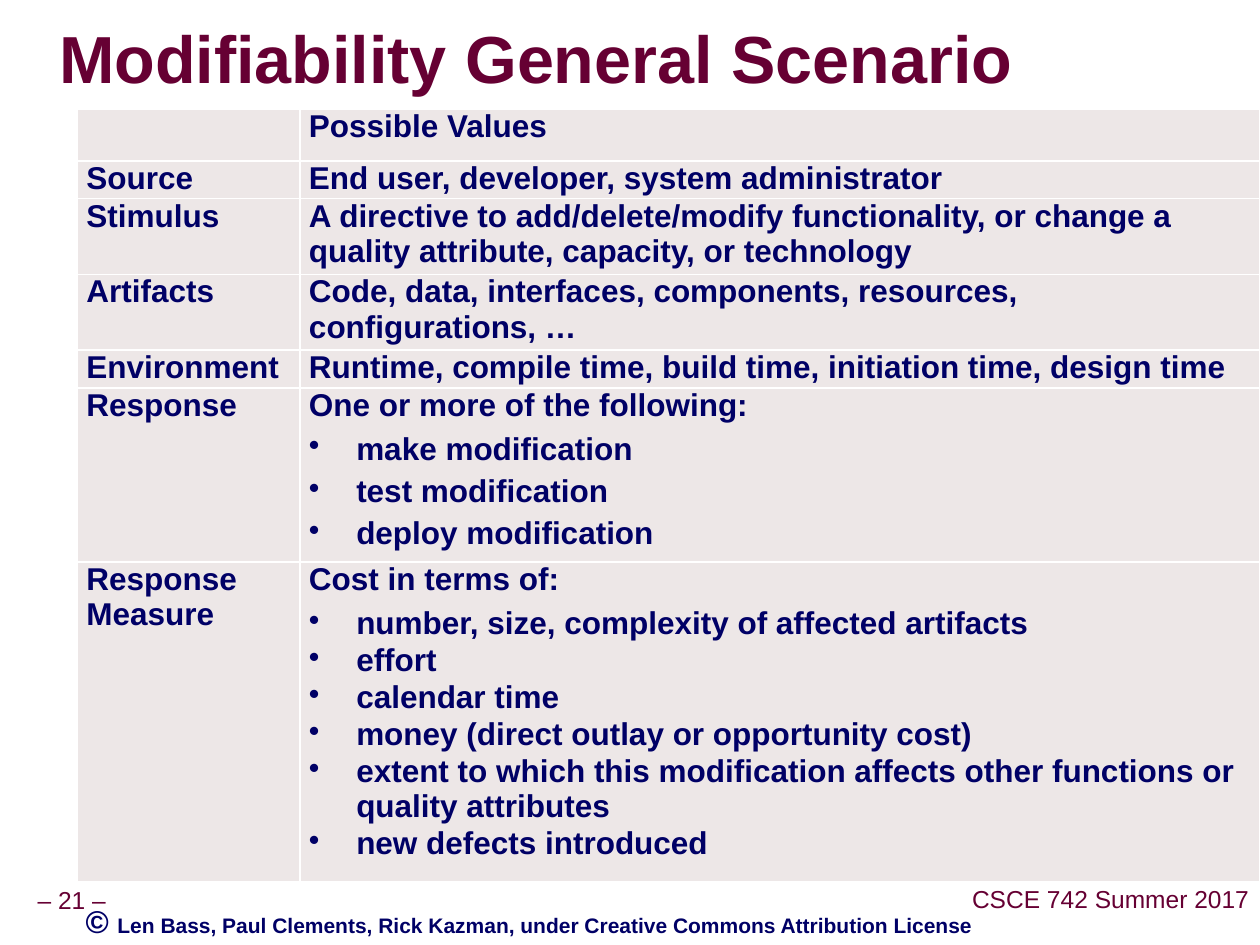
from lxml import etree
from pptx import Presentation
from pptx.dml.color import RGBColor
from pptx.enum.text import MSO_ANCHOR, MSO_AUTO_SIZE, PP_ALIGN
from pptx.oxml import parse_xml
from pptx.oxml.ns import qn
from pptx.util import Pt

LEFT, CENTER = PP_ALIGN.LEFT, PP_ALIGN.CENTER
MIDDLE, NO_FIT = MSO_ANCHOR.MIDDLE, MSO_AUTO_SIZE.NONE
NS = 'xmlns:a="http://schemas.openxmlformats.org/drawingml/2006/main"'
COLORS = {"wine": "660033", "navy": "000066", "cell": "EDE7E7",
          "line": "FFFFFF", "shade": "969696"}


def style(font, size, color, bold=False):
    font.name, font.size, font.bold = "Arial", Pt(size), bold
    font.color.rgb = RGBColor.from_string(COLORS[color])


def add_box(left, top, width, height, inset):
    box = slide.shapes.add_textbox(Pt(left), Pt(top), Pt(width), Pt(height))
    frame = box.text_frame
    frame.margin_left = frame.margin_right = Pt(inset)
    frame.margin_top = frame.margin_bottom = Pt(3.6)
    return frame


deck = Presentation()
deck.slide_width, deck.slide_height = Pt(720), Pt(540)
slide = deck.slides.add_slide(deck.slide_layouts[5])

# Page number and course
for text, left, top, width in (("– 21 –", 17.3, 504, 47.5),
                               ("CSCE 742 Summer 2017", 551.5, 503.3, 166.3)):
    frame = add_box(left, top, width, 22.3, 3.6)
    frame.word_wrap = False
    frame.vertical_anchor = MIDDLE
    para = frame.paragraphs[0]
    para.text = text
    para.alignment, para.line_spacing = CENTER, 0.9
    style(para.font, 14, "wine")

# Title with a text shadow
title = slide.shapes.title
title.left, title.top, title.width, title.height = Pt(33.8), Pt(5), Pt(686.2), Pt(61.2)
frame = title.text_frame
frame.margin_left = frame.margin_right = frame.margin_top = frame.margin_bottom = 0
frame.vertical_anchor, frame.auto_size = MIDDLE, NO_FIT
para = frame.paragraphs[0]
para.alignment, para.line_spacing = LEFT, 0.87
run = para.add_run()
run.text = "Modifiability General Scenario"
style(run.font, 38, "wine", True)
fill = run.font._element.find(qn("a:solidFill"))
fill.addnext(parse_xml(
    f'<a:effectLst {NS}><a:outerShdw dist="35921" dir="2700000">'
    f'<a:srgbClr val="{COLORS["shade"]}"/></a:outerShdw></a:effectLst>'))

# Scenario table: label, lead text, bullets, space after each bullet
rows = [
    ("", "Possible Values", [], 0),
    ("Source", "End user, developer, system administrator", [], 0),
    ("Stimulus", "A directive to add/delete/modify functionality, or change a "
     "quality attribute, capacity, or technology", [], 0),
    ("Artifacts", "Code, data, interfaces, components, resources, "
     "configurations, …", [], 0),
    ("Environment", "Runtime, compile time, build time, initiation time, "
     "design time", [], 0),
    ("Response", "One or more of the following:",
     ["make modification", "test modification", "deploy modification"], 3),
    ("Response \vMeasure", "Cost in terms of:",
     ["number, size, complexity of affected artifacts", "effort",
      "calendar time", "money (direct outlay or opportunity cost)",
      "extent to which this modification affects other functions or "
      "quality attributes", "new defects introduced"], 0),
]
heights = [29.5, 21.6, 43.2, 43.2, 21.6, 99.6, 182.9]
table = slide.shapes.add_table(len(rows), 2, Pt(44.2), Pt(62.4), Pt(675.8),
                               Pt(sum(heights))).table
table.first_row = table.horz_banding = False
table.columns[0].width, table.columns[1].width = Pt(127.2), Pt(548.6)

for row, height, (label, lead, items, gap) in zip(table.rows, heights, rows):
    row.height = Pt(height)
    for cell, texts in zip(row.cells, ([label], [lead] + items)):
        cell.margin_left = cell.margin_right = Pt(5.2)
        cell.margin_top = cell.margin_bottom = 0
        cell.fill.solid()
        cell.fill.fore_color.rgb = RGBColor.from_string(COLORS["cell"])
        props = cell._tc.get_or_add_tcPr()
        for spot, side in enumerate("LRTB"):
            props.insert(spot, parse_xml(
                f'<a:ln{side} {NS} w="12700"><a:solidFill><a:srgbClr '
                f'val="{COLORS["line"]}"/></a:solidFill></a:ln{side}>'))
        for place, text in enumerate(texts):
            frame = cell.text_frame
            para = frame.add_paragraph() if place else frame.paragraphs[0]
            para.text = text
            para.space_before, para.space_after = Pt(4), Pt(4)
            if place:
                para.space_before, para.space_after = Pt(1), Pt(gap)
                props = para._p.get_or_add_pPr()
                props.set("marL", str(Pt(27)))
                props.set("indent", str(-Pt(27)))
                etree.SubElement(props, qn("a:buChar")).set("char", "•")
            style(para.font, 18, "navy", True)

# Credit line
frame = add_box(41.8, 511.9, 527.8, 22.3, 7.2)
frame.word_wrap = True
para = frame.paragraphs[0]
for text, size in (("© ", 18), ("Len Bass, Paul Clements, Rick Kazman, under "
                                "Creative Commons Attribution License", 12)):
    run = para.add_run()
    run.text = text
    style(run.font, size, "navy", True)

deck.save("out.pptx")
